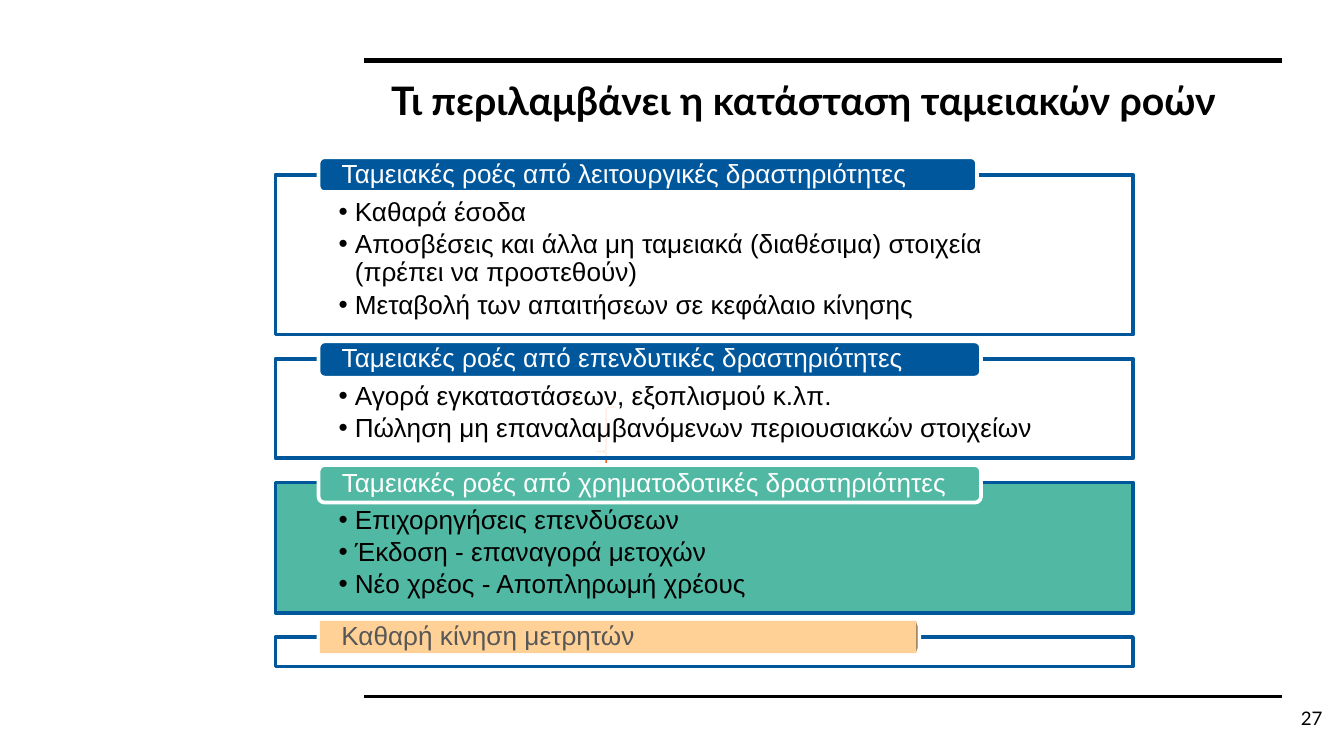
import dataclasses

import lxml.etree
import pptx
import pptx.dml.color
import pptx.enum.shapes
import pptx.enum.text
import pptx.oxml.ns
import pptx.util

Inches = pptx.util.Inches
Pt = pptx.util.Pt
SHAPE = pptx.enum.shapes.MSO_SHAPE
ANCHOR = pptx.enum.text.MSO_ANCHOR
ALIGN = pptx.enum.text.PP_ALIGN
qn = pptx.oxml.ns.qn


@dataclasses.dataclass(frozen=True)
class Theme:
    """Colours, fonts and type sizes of the slide."""
    black: str = "000000"
    white: str = "FFFFFF"
    blue: str = "00579B"
    green: str = "51B9A3"
    peach: str = "FFD197"
    grey: str = "575757"
    orange: str = "F46524"
    heading_font: str = "Lato"
    body_font: str = "Arial"
    title_size: int = 21
    body_size: int = 14
    number_size: int = 10


def rgb(value):
    """Return a colour object for a hex string."""
    return pptx.dml.color.RGBColor.from_string(value)


class SlideBuilder:
    """Draws styled elements on the current slide."""

    def __init__(self, s, theme):
        """Keep the slide and its theme."""
        self.s = s
        self.theme = theme

    def frame(self, sp, insets, anchor=ANCHOR.TOP):
        """Prepare a text frame and return it."""
        tf = sp.text_frame
        tf.word_wrap = True
        tf.auto_size = pptx.enum.text.MSO_AUTO_SIZE.NONE
        tf.vertical_anchor = anchor
        tf.margin_left, tf.margin_top, tf.margin_right, tf.margin_bottom = map(Inches, insets)
        return tf

    def run(self, p, text, font, size, color, bold=False):
        """Add one formatted run to a paragraph."""
        r = p.add_run()
        r.text = text
        r.font.name = font
        r.font.size = Pt(size)
        r.font.bold = bold
        r.font.color.rgb = rgb(color)

    def title(self, text, box):
        """Place and fill the title placeholder."""
        sp = self.s.shapes.title
        sp.left, sp.top, sp.width, sp.height = map(Inches, box)
        p = self.frame(sp, (0.1, 0.1, 0.1, 0.1)).paragraphs[0]
        p.alignment = ALIGN.LEFT
        self.run(p, text, self.theme.heading_font, self.theme.title_size, self.theme.black, True)

    def shape(self, kind, box, fill=None, line=None, width=2, alpha=None):
        """Add a preset shape with its fill and outline."""
        sp = self.s.shapes.add_shape(kind, *map(Inches, box))
        sp.shadow.inherit = False
        if fill:
            sp.fill.solid()
            sp.fill.fore_color.rgb = rgb(fill)
        else:
            sp.fill.background()
        if alpha:
            clr = sp._element.spPr.find(qn("a:solidFill"))[0]
            lxml.etree.SubElement(clr, qn("a:alpha"), val=str(alpha * 1000))
        if line:
            sp.line.color.rgb = rgb(line)
            sp.line.width = Pt(width)
        else:
            sp.line.fill.background()
        return sp

    def bullets(self, sp, items):
        """Fill a panel with a bulleted list."""
        tf = self.frame(sp, (0.47, 0.18, 0.47, 0.11))
        for i, text in enumerate(items):
            p = tf.add_paragraph() if i else tf.paragraphs[0]
            p.level = 1
            p.alignment = ALIGN.LEFT
            p.line_spacing = 0.9
            p.space_before = Pt(2.1 if i else 0)
            pPr = p._p.get_or_add_pPr()
            pPr.set("marL", str(Inches(0.12)))
            pPr.set("indent", str(Inches(-0.12)))
            clr = lxml.etree.SubElement(pPr, qn("a:buClr"))
            lxml.etree.SubElement(clr, qn("a:srgbClr"), val=self.theme.black)
            lxml.etree.SubElement(pPr, qn("a:buFont"), typeface=self.theme.body_font)
            lxml.etree.SubElement(pPr, qn("a:buChar"), char="•")
            self.run(p, text, self.theme.body_font, self.theme.body_size, self.theme.black)

    def label(self, sp, text, color):
        """Write a one-line heading in a shape."""
        p = self.frame(sp, (0.16, 0, 0.16, 0), ANCHOR.MIDDLE).paragraphs[0]
        p.alignment = ALIGN.LEFT
        p.line_spacing = 0.9
        self.run(p, text, self.theme.body_font, self.theme.body_size, color)

    def tag(self, box, fill):
        """Add a rounded tag with a white outline."""
        sp = self.shape(SHAPE.ROUNDED_RECTANGLE, box, fill, self.theme.white)
        sp.adjustments[0] = 0.167
        return sp

    def rule(self, left, right, y, width):
        """Draw a horizontal rule."""
        c = self.s.shapes.add_connector(
            pptx.enum.shapes.MSO_CONNECTOR.STRAIGHT,
            Inches(left), Inches(y), Inches(right), Inches(y))
        c.line.color.rgb = rgb(self.theme.black)
        c.line.width = Pt(width)
        lxml.etree.SubElement(c._element.spPr, qn("a:effectLst"))

    def page_number(self, text, box):
        """Add the page number."""
        sp = self.s.shapes.add_textbox(*map(Inches, box))
        p = self.frame(sp, (0.08, 0.04, 0.08, 0.04)).paragraphs[0]
        p.alignment = ALIGN.RIGHT
        self.run(p, text, self.theme.heading_font, self.theme.number_size, self.theme.black)


def main():
    """Build and save the slide."""
    prs = pptx.Presentation()
    prs.slide_width = Inches(10)
    prs.slide_height = prs.slide_width * 9 // 16
    theme = Theme()
    b = SlideBuilder(prs.slides.add_slide(prs.slide_layouts[5]), theme)

    b.title("Τι περιλαμβάνει η κατάσταση ταμειακών ροών", (2.81, 0.47, 6.83, 0.7))
    brace = b.shape(SHAPE.LEFT_BRACE, (4.44, 3.03, 0.14, 0.66), line=theme.orange, width=0.75)
    brace.adjustments[0] = 0.083

    sections = [
        ("Ταμειακές ροές από λειτουργικές δραστηριότητες", 1.19, (4.9, 0.26),
         theme.white, 89, theme.blue,
         ["Καθαρά έσοδα",
          "Αποσβέσεις και άλλα μη ταμειακά (διαθέσιμα) στοιχεία (πρέπει να προστεθούν)",
          "Μεταβολή των απαιτήσεων σε κεφάλαιο κίνησης"]),
        ("Ταμειακές ροές από επενδυτικές δραστηριότητες", 0.74, (4.93, 0.27),
         theme.white, 89, theme.blue,
         ["Αγορά εγκαταστάσεων, εξοπλισμού κ.λπ.",
          "Πώληση μη επαναλαμβανόμενων περιουσιακών στοιχείων"]),
        ("Ταμειακές ροές από χρηματοδοτικές δραστηριότητες", 0.97, (4.93, 0.28),
         theme.green, None, theme.green,
         ["Επιχορηγήσεις επενδύσεων",
          "Έκδοση - επαναγορά μετοχών",
          "Νέο χρέος - Αποπληρωμή χρέους"]),
    ]
    left, width, gap, overlap, tag_left = 2.05, 6.38, 0.18, 0.13, 2.37
    top = 1.3
    for heading, height, tag_size, fill, alpha, tag_fill, items in sections:
        panel = b.shape(SHAPE.RECTANGLE, (left, top, width, height), fill, theme.blue, alpha=alpha)
        b.bullets(panel, items)
        b.label(b.tag((tag_left, top - overlap, *tag_size), tag_fill), heading, theme.white)
        top += height + gap

    b.shape(SHAPE.RECTANGLE, (left, top, width, 0.22), theme.white, theme.blue, alpha=89)
    b.tag((tag_left, top - overlap, 4.47, 0.26), theme.black)
    total = b.shape(SHAPE.RECTANGLE, (2.38, top - 0.12, 4.44, 0.24), theme.peach)
    b.label(total, "Καθαρή κίνηση μετρητών", theme.grey)

    for y, weight in ((0.45, 3), (5.18, 1.5)):
        b.rule(2.71, 9.54, y, weight)
    b.page_number("27", (9.49, 5.22, 0.43, 0.43))
    prs.save("out.pptx")


if __name__ == "__main__":
    main()
